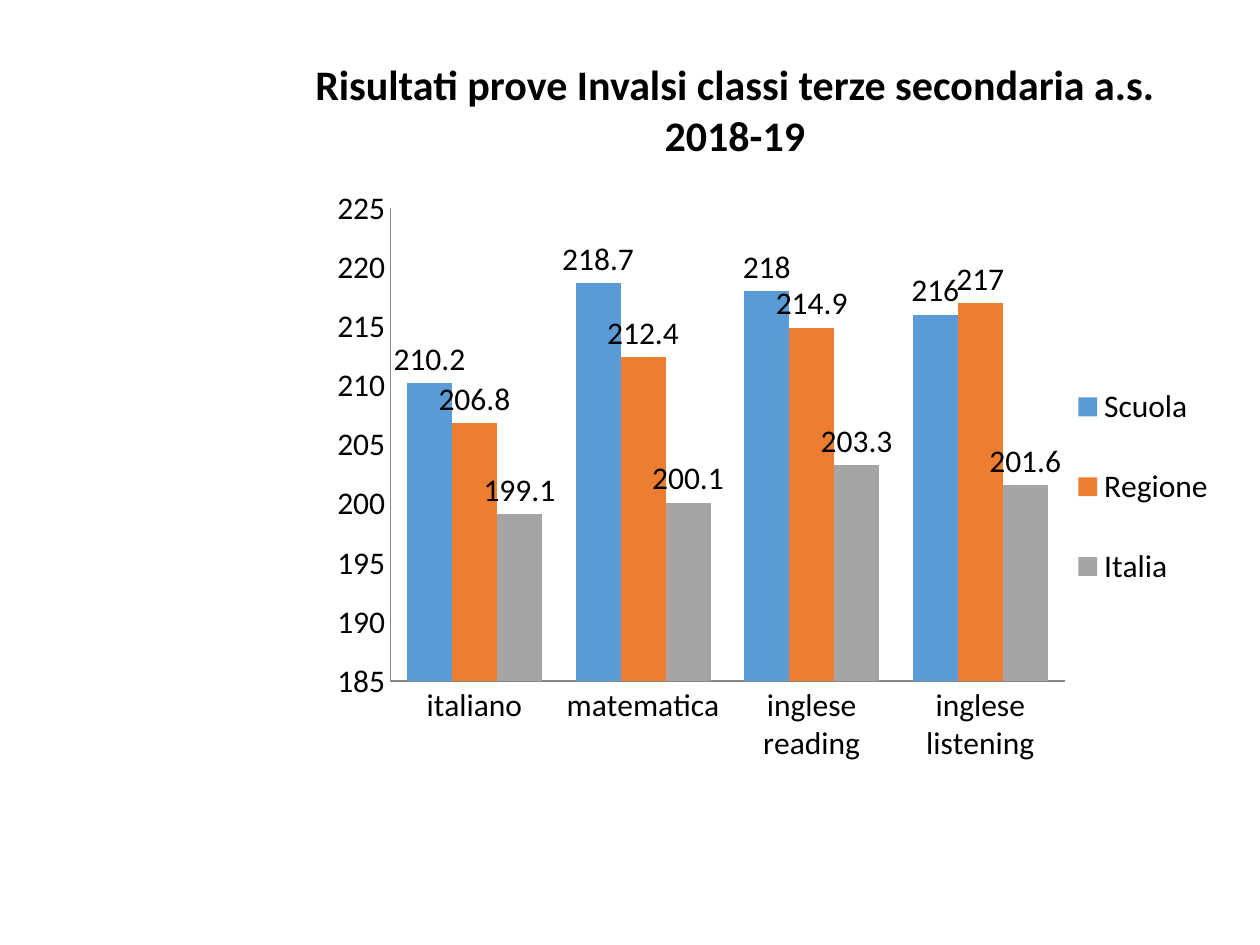
from pptx import Presentation
from pptx import util as u
from pptx.chart.data import CategoryChartData
from pptx.dml.color import RGBColor
from pptx.enum import chart as ch, text
from pptx.oxml import parse_xml
from pptx.oxml.ns import nsdecls, qn

TITLE = "Risultati prove Invalsi classi terze secondaria a.s. 2018-19"
SUBJECTS = ["italiano", "matematica", "inglese reading", "inglese listening"]
RESULTS = [
    ("Scuola", "5B9BD5", (210.2, 218.7, 218, 216)),
    ("Regione", "ED7D31", (206.8, 212.4, 214.9, 217)),
    ("Italia", "A5A5A5", (199.1, 200.1, 203.3, 201.6)),
]
TITLE_BOX = (144, 30, 552, 66)
CHART_BOX = (180.7, 102, 528, 342)
PLOT_AREA = {"x": 0.08, "y": 0.05, "w": 0.73, "h": 0.79}
LEGEND_AREA = {"x": 0.81, "y": 0.28, "w": 0.17, "h": 0.47}
TITLE_FONT = {"name": "Calibri", "size": u.Pt(24), "bold": True}
CHART_FONT = {"name": "Calibri", "size": u.Pt(18), "bold": False}
SCALE = {"minimum_scale": 185, "maximum_scale": 225, "major_unit": 5}


def paint(color, value):
    color.rgb = RGBColor.from_string(value)


def apply(target, values):
    for key, value in values.items():
        setattr(target, key, value)


def style_font(font, values):
    apply(font, values)
    paint(font.color, "000000")


def place(parent, index, area, inner=False):
    for old in parent.findall(qn("c:layout")):
        parent.remove(old)
    target = '<c:layoutTarget val="inner"/>' if inner else ""
    modes = "".join(f'<c:{k}Mode val="edge"/>' for k in "xy")
    sizes = "".join(f'<c:{k} val="{v}"/>' for k, v in area.items())
    parent.insert(index, parse_xml(
        f'<c:layout {nsdecls("c")}><c:manualLayout>{target}{modes}{sizes}'
        '</c:manualLayout></c:layout>'))


def add_title(slide):
    title = slide.shapes.title
    box = dict(zip(("left", "top", "width", "height"), map(u.Pt, TITLE_BOX)))
    apply(title, box)
    frame = title.text_frame
    apply(frame, {"text": TITLE, "word_wrap": True,
                  "auto_size": text.MSO_AUTO_SIZE.NONE,
                  "vertical_anchor": text.MSO_ANCHOR.TOP})
    paragraph = frame.paragraphs[0]
    apply(paragraph, {"alignment": text.PP_ALIGN.CENTER, "line_spacing": 1.0,
                      "space_before": u.Pt(0)})
    style_font(paragraph.runs[0].font, TITLE_FONT)


def add_results(slide):
    data = CategoryChartData()
    data.categories = SUBJECTS
    for name, _, scores in RESULTS:
        data.add_series(name, scores)
    chart = slide.shapes.add_chart(
        ch.XL_CHART_TYPE.COLUMN_CLUSTERED, *map(u.Pt, CHART_BOX), data).chart
    apply(chart, {"has_title": False, "has_legend": True})
    style_font(chart.font, CHART_FONT)
    apply(chart.legend, {"position": ch.XL_LEGEND_POSITION.RIGHT,
                         "include_in_layout": False})
    apply(chart.value_axis, SCALE)
    for axis in (chart.category_axis, chart.value_axis):
        apply(axis, {"has_major_gridlines": False,
                     "major_tick_mark": ch.XL_TICK_MARK.NONE,
                     "minor_tick_mark": ch.XL_TICK_MARK.NONE})
        paint_line = axis.format.line
        paint(paint_line.color, "868686")
        paint_line.width = u.Pt(0.75)
    plot = chart.plots[0]
    apply(plot, {"gap_width": 75, "overlap": 0, "vary_by_categories": False})
    for series, (_, color, _) in zip(plot.series, RESULTS):
        series.format.fill.solid()
        paint(series.format.fill.fore_color, color)
        apply(series.data_labels, {
            "show_value": True,
            "position": ch.XL_LABEL_POSITION.OUTSIDE_END})
    place(chart.element.find(".//" + qn("c:plotArea")), 0, PLOT_AREA, True)
    place(chart.element.find(".//" + qn("c:legend")), 1, LEGEND_AREA)


def main():
    deck = Presentation()
    apply(deck, {"slide_width": u.Pt(720), "slide_height": u.Pt(540)})
    slide = deck.slides.add_slide(deck.slide_layouts[5])
    add_title(slide)
    add_results(slide)
    deck.save("out.pptx")


if __name__ == "__main__":
    main()
